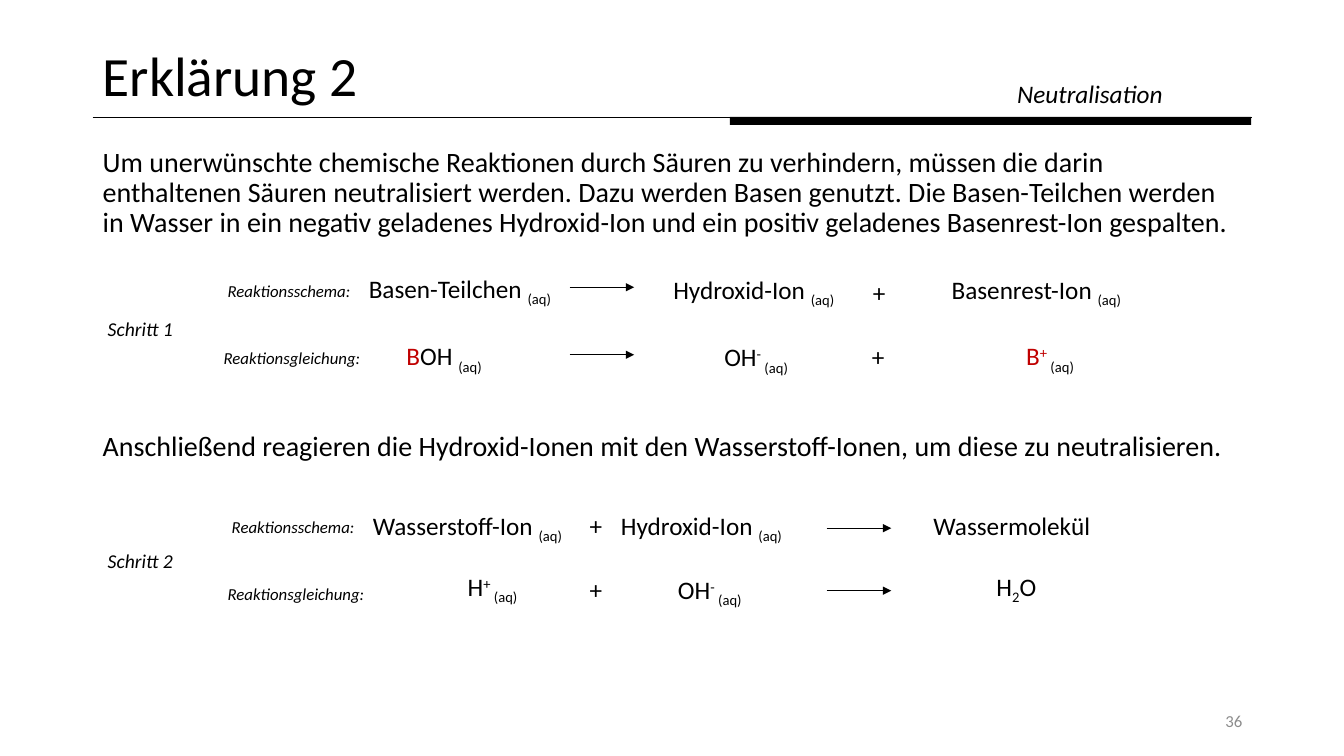
import pptx
import pptx.dml.color
import pptx.enum.shapes
import pptx.enum.text
import pptx.oxml.ns
import pptx.oxml.xmlchemy
import pptx.util

Inches = pptx.util.Inches
Align = pptx.enum.text.PP_ALIGN
Anchor = pptx.enum.text.MSO_ANCHOR
BLACK, RED, GRAY = "000000", "C00000", "8C8C8C"
SUPER, SUB = 30, -25
AQ = ("(aq)", {"baseline": SUB})


def rgb(value):
    return pptx.dml.color.RGBColor.from_string(value)


def add_span(para, text, size=18, color=BLACK, italic=False, baseline=0):
    """Append formatted text; baseline is the shift in percent."""
    span = para.add_run()
    span.text = text
    span.font.name = "Calibri"
    span.font.size = pptx.util.Pt(size)
    span.font.italic = italic
    span.font.color.rgb = rgb(color)
    if baseline:
        span.font._element.set("baseline", str(baseline * 1000))


class Page:
    def __init__(self, deck):
        self.slide = deck.slides.add_slide(deck.slide_layouts[6])
        self.shapes = self.slide.shapes

    def text(self, left, top, width, height, *paragraphs, align=Align.LEFT,
             anchor=Anchor.TOP, line_spacing=1.0, gap=0, wrap=True, **style):
        """Each paragraph is a string or a list of (text, format) spans."""
        box = self.shapes.add_textbox(*map(Inches, (left, top, width, height)))
        frame = box.text_frame
        frame.word_wrap = wrap
        frame.vertical_anchor = anchor
        for index, content in enumerate(paragraphs):
            para = frame.add_paragraph() if index else frame.paragraphs[0]
            para.alignment = align
            para.line_spacing = line_spacing
            para.space_before = pptx.util.Pt(gap if index else 0)
            spans = [(content, {})] if isinstance(content, str) else content
            for text, extra in spans:
                add_span(para, text, **{**style, **extra})

    def bar(self, left, top, width, height):
        shape = self.shapes.add_shape(
            pptx.enum.shapes.MSO_SHAPE.RECTANGLE,
            *map(Inches, (left, top, width, height)))
        shape.shadow.inherit = False
        shape.fill.solid()
        shape.fill.fore_color.rgb = rgb(BLACK)
        shape.line.fill.background()

    def line(self, left, top, length, arrow=False):
        """Draw a thin horizontal line, optionally with a head at its right end."""
        line = self.shapes.add_connector(
            pptx.enum.shapes.MSO_CONNECTOR.STRAIGHT,
            *map(Inches, (left, top, left + length, top)))
        line.line.color.rgb = rgb(BLACK)
        line.line.width = pptx.util.Pt(0.5)
        properties = line._element.spPr
        if arrow:
            head = pptx.oxml.xmlchemy.OxmlElement("a:tailEnd")
            head.set("type", "triangle")
            properties.find(pptx.oxml.ns.qn("a:ln")).append(head)
        properties.append(pptx.oxml.xmlchemy.OxmlElement("a:effectLst"))

    def term(self, left, top, width, *spans, **options):
        self.text(left, top, width, 0.4, list(spans), **options)

    def step(self, number, top, label_left, label_top):
        """Label one step and its two reaction rows."""
        self.text(0.97, top, 1.19, 0.34, f"Schritt {number}", size=14, italic=True)
        self.text(label_left, label_top, 1.52, 0.3, "Reaktionsschema:",
                  size=12, italic=True)
        self.text(label_left - 0.04, label_top + 0.66, 1.62, 0.3,
                  "Reaktionsgleichung:", size=12, italic=True)


def main():
    deck = pptx.Presentation()
    deck.slide_width, deck.slide_height = Inches(13.33), Inches(7.5)
    page = Page(deck)

    page.line(0.92, 1.16, 11.5)
    page.bar(7.24, 1.16, 5.17, 0.08)
    page.text(0.92, 0.4, 11.5, 0.76, "Erklärung 2", size=39.6,
              anchor=Anchor.MIDDLE, line_spacing=0.9)
    page.text(9.99, 0.73, 2.76, 0.4, "Neutralisation", italic=True)
    page.text(
        0.92, 1.42, 11.5, 5.33,
        "Um unerwünschte chemische Reaktionen durch Säuren zu verhindern, müssen "
        "die darin enthaltenen Säuren neutralisiert werden. Dazu werden Basen "
        "genutzt. Die Basen-Teilchen werden in Wasser in ein negativ geladenes "
        "Hydroxid-Ion und ein positiv geladenes Basenrest-Ion gespalten.",
        "Anschließend reagieren die Hydroxid-Ionen mit den Wasserstoff-Ionen, um "
        "diese zu neutralisieren.",
        size=20, line_spacing=0.9, gap=138)
    page.text(9.42, 6.95, 3, 0.4, "36", size=12, color=GRAY,
              align=Align.RIGHT, anchor=Anchor.MIDDLE)

    page.step(1, 3.09, 2.16, 2.74)
    page.step(2, 5.4, 2.2, 5.08)

    # Word equations
    for left, top, width, name in (
            (3.56, 2.66, 2.06, "Basen-Teilchen "),
            (6.58, 2.67, 1.97, "Hydroxid-Ion "),
            (9.34, 2.67, 1.94, "Basenrest-Ion "),
            (3.6, 5.01, 2.26, "Wasserstoff-Ion "),
            (6.06, 5.01, 2.26, "Hydroxid-Ion ")):
        page.term(left, top, width, (name, {}), AQ, wrap=name != "Basenrest-Ion ")
    page.term(9.16, 5.01, 2.26, ("Wassermolekül", {}))

    # Symbol equations
    raised, red = {"baseline": SUPER}, {"color": RED}
    hydroxide = (("OH", {}), ("- ", raised), AQ)
    for left, top, width, spans in (
            (3.43, 3.33, 1.95, (("B", red), ("OH ", {}), AQ)),
            (6.45, 3.34, 2.1, hydroxide),
            (9.44, 3.33, 1.95, (("B", red), ("+ ", {**red, **raised}), AQ)),
            (4.3, 5.62, 1.17, (("H", {}), ("+ ", raised), AQ)),
            (5.99, 5.65, 2.1, hydroxide),
            (9.03, 5.62, 2.1, (("H", {}), ("2", {"baseline": SUB}), ("O", {})))):
        page.term(left, top, width, *spans, align=Align.CENTER)

    for left, top in ((8.56, 2.7), (8.55, 3.34), (5.75, 5.01), (5.75, 5.65)):
        page.term(left, top, 0.31, ("+", {}))
    for left, top in ((5.65, 2.85), (5.65, 3.52), (8.2, 5.24), (8.2, 5.86)):
        page.line(left, top, 0.64, arrow=True)

    deck.save("out.pptx")


if __name__ == "__main__":
    main()
